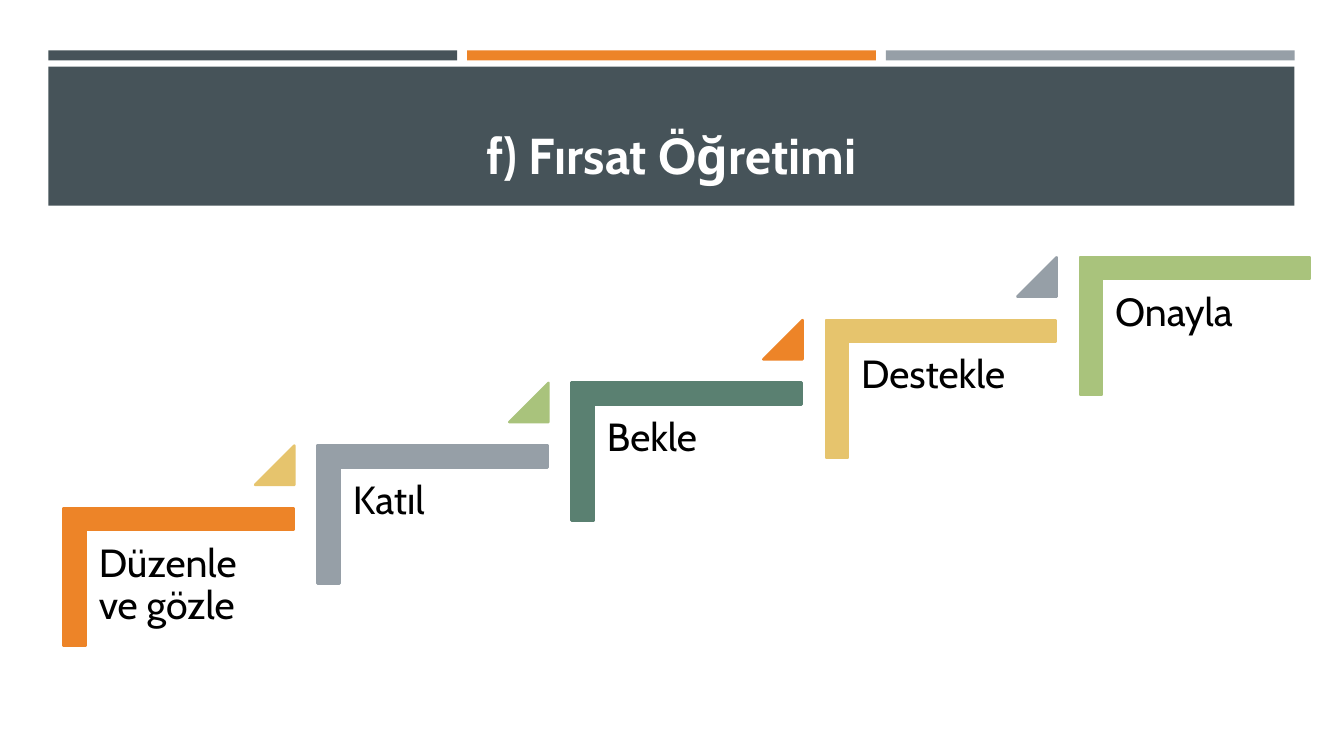
from pptx import Presentation
from pptx.dml.color import RGBColor
from pptx.enum import shapes, text
from pptx.util import Inches, Pt

SLATE = RGBColor(0x46, 0x53, 0x59)
ORANGE = RGBColor(0xED, 0x84, 0x28)
GRAY = RGBColor(0x96, 0x9F, 0xA7)
TEAL = RGBColor(0x5A, 0x80, 0x71)
GOLD = RGBColor(0xE6, 0xC4, 0x6D)
GREEN = RGBColor(0xA9, 0xC3, 0x7C)
WHITE = RGBColor(0xFF, 0xFF, 0xFF)
BLACK = RGBColor(0, 0, 0)
FONT = "Cabin"
SHAPE = shapes.MSO_SHAPE

STEPS = [
    ("Düzenle ve gözle", ORANGE, GOLD),
    ("Katıl", GRAY, GREEN),
    ("Bekle", TEAL, ORANGE),
    ("Destekle", GOLD, GRAY),
    ("Onayla", GREEN, None),
]


def add_block(s, kind, x, y, w, h, color, outline=None):
    """Add a filled preset shape, outlined in its own colour if a width is given."""
    sp = s.shapes.add_shape(kind, Inches(x), Inches(y), Inches(w), Inches(h))
    sp.shadow.inherit = False
    sp.fill.solid()
    sp.fill.fore_color.rgb = color
    if outline:
        sp.line.color.rgb = color
        sp.line.width = Pt(outline)
    else:
        sp.line.fill.background()
    return sp


def add_label(s, x, y, w, h, words, size, color, inset):
    """Add a wrapped text box and return its frame and paragraph."""
    tf = s.shapes.add_textbox(Inches(x), Inches(y), Inches(w), Inches(h)).text_frame
    tf.word_wrap = True
    tf.margin_left = tf.margin_right = Inches(inset)
    tf.margin_top = tf.margin_bottom = Inches(inset)
    p = tf.paragraphs[0]
    p.text = words
    p.font.name = FONT
    p.font.size = Pt(size)
    p.font.color.rgb = color
    return tf, p


def add_header(s, x, y, w):
    """Draw the three accent bars and the title band below them."""
    gap = 0.1
    bar_w = (w - 2 * gap) / 3
    for i, color in enumerate((SLATE, ORANGE, GRAY)):
        add_block(s, SHAPE.RECTANGLE, x + i * (bar_w + gap), y, bar_w, 0.1, color)
    add_block(s, SHAPE.RECTANGLE, x, y + 0.16, w, 1.38, SLATE)
    tf, p = add_label(s, x + 0.15, y + 0.3, w - 0.3, 1.08,
                      "f) Fırsat Öğretimi", 36, WHITE, 0.05)
    tf.vertical_anchor = text.MSO_ANCHOR.BOTTOM
    p.alignment = text.PP_ALIGN.CENTER
    p.font.bold = True


def add_step(s, x, y, words, color, next_color):
    """Draw one stair step with its label and the triangle leading upward."""
    w, h = 2.28, 1.37
    shift = (w - h) / 2
    sp = add_block(s, SHAPE.CORNER, x + shift, y - shift, h, w, color, 1.75)
    sp.rotation = 90
    sp.adjustments[0] = sp.adjustments[1] = 0.16
    p = add_label(s, x + 0.23, y + 0.23, 2.06, 1.81, words, 28, BLACK, 0.12)[1]
    p.line_spacing = 0.9
    if next_color:
        sp = add_block(s, SHAPE.ISOSCELES_TRIANGLE, x + 1.9, y - 0.62,
                       0.39, 0.39, next_color, 1.75)
        sp.adjustments[0] = 1


def add_staircase(s, x, y, w, h):
    """Spread the steps evenly from the lower left to the upper right."""
    last = len(STEPS) - 1
    for i, step in enumerate(STEPS):
        add_step(s, x + w * i / last, y + h * (1 - i / last), *step)


def main():
    """Build the slide and save it."""
    prs = Presentation()
    prs.slide_width, prs.slide_height = Inches(13.33), Inches(7.5)
    s = prs.slides.add_slide(prs.slide_layouts[6])
    add_header(s, 0.48, 0.5, 12.36)
    add_staircase(s, 0.63, 2.55, 10.08, 2.49)
    prs.save("out.pptx")


if __name__ == "__main__":
    main()
